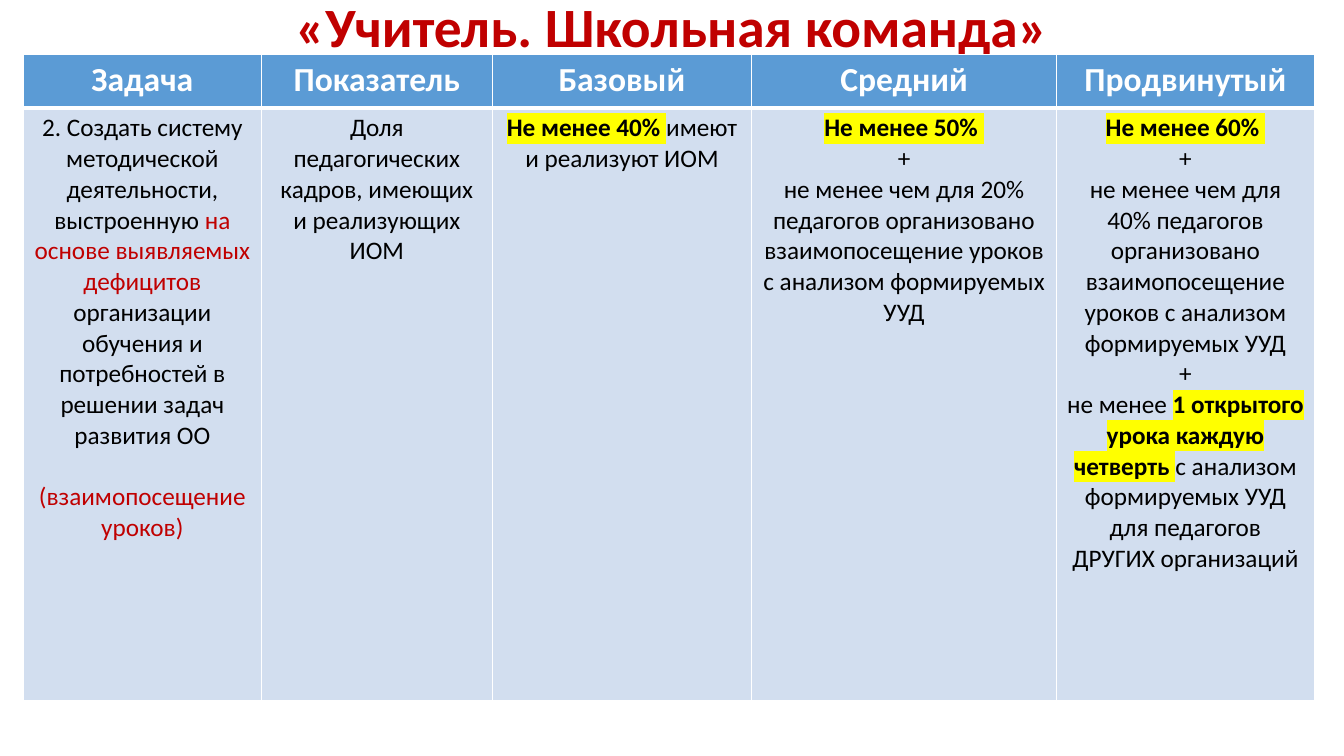
from lxml.etree import SubElement
from pptx import Presentation
from pptx.dml.color import RGBColor
from pptx.enum.text import MSO_ANCHOR as Anchor, PP_ALIGN as Align
from pptx.oxml import parse_xml
from pptx.oxml.ns import nsdecls, qn
from pptx.util import Pt

FONT = "Calibri"
WHITE, BLACK, RED, YELLOW = "FFFFFF", "000000", "C00000", "FFFF00"
HEADER_FILL, BODY_FILL = "5B9BD5", "D2DEEF"
COLUMN_WIDTHS = [170, 165, 185.2, 217.8, 184.2]
ROW_HEIGHTS = [38, 423.5]
BODY_SIZE = 18
BLANK_LINE = 22

HEADERS = ["Задача", "Показатель", "Базовый", "Средний", "Продвинутый"]
PLAIN, ACCENT, MARKED = "plain", "accent", "marked"
BODY = [
    [
        [
            ("2. Создать систему методической деятельности, выстроенную ", PLAIN),
            ("на основе выявляемых дефицитов ", ACCENT),
            ("организации обучения и потребностей в решении задач развития ОО", PLAIN),
        ],
        [("(взаимопосещение уроков)", ACCENT)],
    ],
    [[("Доля педагогических кадров, имеющих и реализующих ИОМ", PLAIN)]],
    [[("Не менее 40% ", MARKED), ("имеют и реализуют ИОМ", PLAIN)]],
    [
        [("Не менее 50% ", MARKED)],
        [("+", PLAIN)],
        [("не менее чем для 20% педагогов организовано взаимопосещение уроков "
          "с анализом формируемых УУД", PLAIN)],
    ],
    [
        [("Не менее 60% ", MARKED)],
        [("+", PLAIN)],
        [("не менее чем для 40% педагогов организовано взаимопосещение уроков "
          "с анализом формируемых УУД", PLAIN)],
        [("+", PLAIN)],
        [
            ("не менее ", PLAIN),
            ("1 открытого урока каждую четверть ", MARKED),
            ("с анализом формируемых УУД для педагогов ДРУГИХ организаций", PLAIN),
        ],
    ],
]


def rgb(color):
    """Turn a hex string into a colour."""
    return RGBColor.from_string(color)


def format_run(run, size, color, bold=False):
    """Set the font of a run."""
    run.font.name = FONT
    run.font.size = Pt(size)
    run.font.bold = bold
    run.font.color.rgb = rgb(color)


def highlight_run(run, color):
    """Put a marker colour behind a run."""
    highlight = parse_xml(
        f'<a:highlight {nsdecls("a")}><a:srgbClr val="{color}"/></a:highlight>')
    run.font._element.find(qn("a:solidFill")).addnext(highlight)


def style_cell(cell, fill, top, bottom):
    """Fill a cell and draw its white borders."""
    cell.fill.solid()
    cell.fill.fore_color.rgb = rgb(fill)
    properties = cell._tc.get_or_add_tcPr()
    borders = [("lnL", 1), ("lnR", 1), ("lnT", top), ("lnB", bottom)]
    for position, (side, width) in enumerate(borders):
        line = parse_xml(f'<a:{side} {nsdecls("a")} w="{Pt(width)}"/>')
        SubElement(SubElement(line, qn("a:solidFill")), qn("a:srgbClr"), val=WHITE)
        properties.insert(position, line)


def add_title(slide, text):
    """Add the centred slide title."""
    shape = slide.shapes.add_textbox(Pt(66), Pt(5), Pt(828), Pt(32.4))
    frame = shape.text_frame
    frame.word_wrap = True
    frame.vertical_anchor = Anchor.MIDDLE
    frame.text = text
    paragraph = frame.paragraphs[0]
    paragraph.alignment = Align.CENTER
    paragraph.line_spacing = 0.9
    format_run(paragraph.runs[0], 39.6, RED, bold=True)


def fill_header(cell, text):
    """Write a column heading."""
    style_cell(cell, HEADER_FILL, top=1, bottom=3)
    cell.text_frame.text = text
    paragraph = cell.text_frame.paragraphs[0]
    paragraph.alignment = Align.CENTER
    format_run(paragraph.runs[0], 24, WHITE, bold=True)


def fill_body(cell, paragraphs):
    """Write the styled paragraphs of a body cell."""
    style_cell(cell, BODY_FILL, top=3, bottom=1)
    frame = cell.text_frame
    for index, parts in enumerate(paragraphs):
        paragraph = frame.add_paragraph() if index else frame.paragraphs[0]
        paragraph.alignment = Align.CENTER
        for text, kind in parts:
            run = paragraph.add_run()
            run.text = text
            color = RED if kind == ACCENT else BLACK
            format_run(run, BODY_SIZE, color, bold=kind == MARKED)
            if kind == MARKED:
                highlight_run(run, YELLOW)


def add_levels_table(slide):
    """Add the table of tasks, indicators and levels."""
    shape = slide.shapes.add_table(
        len(ROW_HEIGHTS), len(COLUMN_WIDTHS), Pt(16.7), Pt(39),
        Pt(sum(COLUMN_WIDTHS)), Pt(sum(ROW_HEIGHTS)))
    table = shape.table
    table.horz_banding = False
    for column, width in zip(table.columns, COLUMN_WIDTHS):
        column.width = Pt(width)
    for row, height in zip(table.rows, ROW_HEIGHTS):
        row.height = Pt(height)
    for index, (header, paragraphs) in enumerate(zip(HEADERS, BODY)):
        fill_header(table.cell(0, index), header)
        fill_body(table.cell(1, index), paragraphs)
    note = table.cell(1, 0).text_frame.paragraphs[1]
    note.space_before = Pt(BLANK_LINE)


def main():
    """Build and save the slide."""
    presentation = Presentation()
    presentation.slide_width = Pt(960)
    presentation.slide_height = Pt(540)
    slide = presentation.slides.add_slide(presentation.slide_layouts[6])
    add_title(slide, "«Учитель. Школьная команда»")
    add_levels_table(slide)
    presentation.save("out.pptx")


if __name__ == "__main__":
    main()
